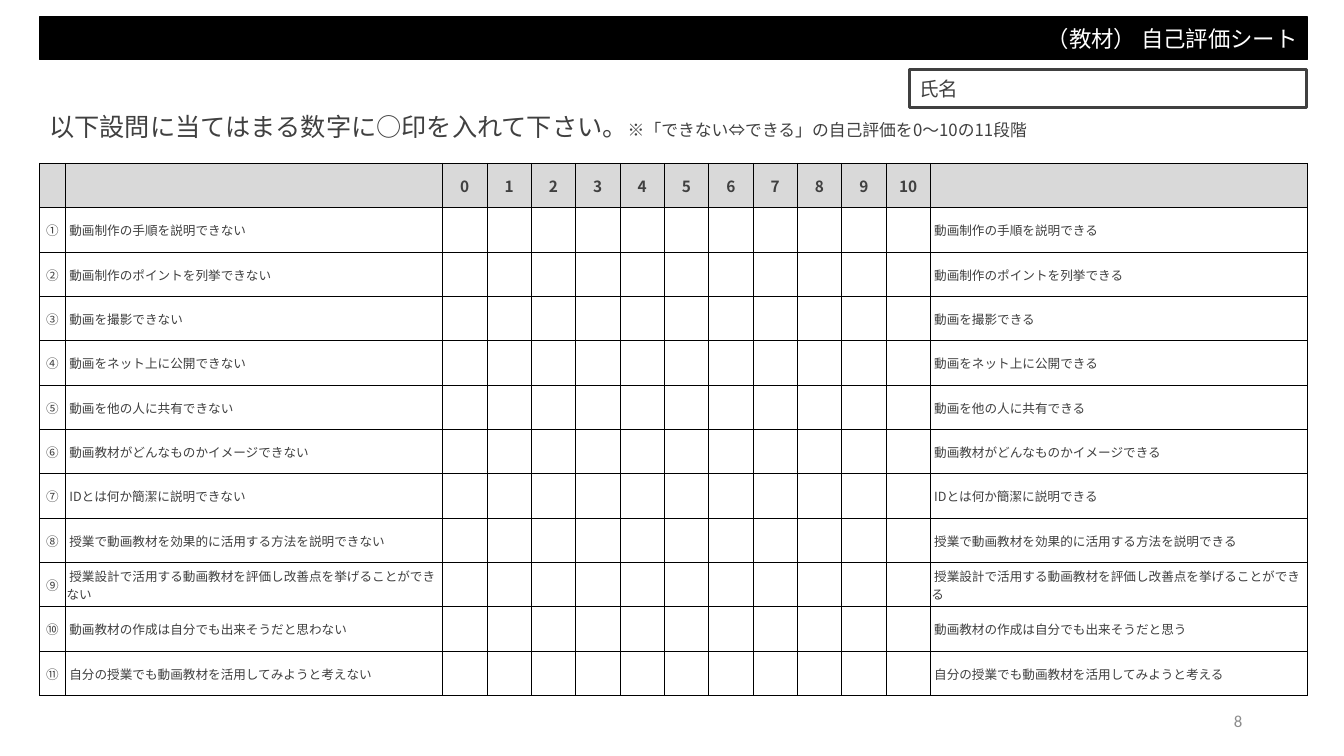
import pptx
import pptx.util
import pptx.dml.color
import pptx.enum.shapes
import pptx.enum.text
import pptx.oxml
import pptx.oxml.ns

Inches = pptx.util.Inches
Pt = pptx.util.Pt
RGBColor = pptx.dml.color.RGBColor
ALIGN = pptx.enum.text.PP_ALIGN
MIDDLE = pptx.enum.text.MSO_ANCHOR.MIDDLE

BLACK = RGBColor(0x00, 0x00, 0x00)
WHITE = RGBColor(0xFF, 0xFF, 0xFF)
DARK = RGBColor(0x40, 0x40, 0x40)
GREY = RGBColor(0x8C, 0x8C, 0x8C)
HEAD = RGBColor(0xD9, 0xD9, 0xD9)
SANS = "Noto Sans CJK JP"

deck = pptx.Presentation()
deck.slide_width = Inches(13.33)
deck.slide_height = Inches(7.5)
slide = deck.slides.add_slide(deck.slide_layouts[6])


def style(font, size, color, name=SANS, bold=False):
    font.size = Pt(size)
    font.bold = bold
    font.name = name
    font.color.rgb = color
    # East Asian glyphs need their own typeface entry
    asian = pptx.oxml.parse_xml(
        f'<a:ea {pptx.oxml.ns.nsdecls("a")} typeface="{name}"/>')
    font._element.find(pptx.oxml.ns.qn("a:latin")).addnext(asian)


def add_box(place, text, size, color, fill, line, width, align):
    box = slide.shapes.add_shape(
        pptx.enum.shapes.MSO_SHAPE.RECTANGLE, *map(Inches, place))
    box.shadow.inherit = False
    box.fill.solid()
    box.fill.fore_color.rgb = fill
    box.line.color.rgb = line
    box.line.width = Pt(width)
    box.text_frame.vertical_anchor = MIDDLE
    para = box.text_frame.paragraphs[0]
    para.text = text
    para.alignment = align
    style(para.font, size, color)


# Title bar and name field
add_box((0.39, 0.17, 12.58, 0.42), "（教材） 自己評価シート", 16,
        WHITE, BLACK, BLACK, 1, ALIGN.RIGHT)
add_box((9.02, 0.69, 3.94, 0.38), "氏名", 14,
        DARK, WHITE, DARK, 2.25, ALIGN.LEFT)

# Instruction
guide = slide.shapes.add_textbox(
    Inches(0.39), Inches(1.06), Inches(11.85), Inches(0.4))
guide.text_frame.word_wrap = True
for text, size in (
        ("以下設問に当てはまる数字に○印を入れて下さい。", 18),
        ("※「できない⇔できる」の自己評価を0～10の11段階", 12)):
    run = guide.text_frame.paragraphs[0].add_run()
    run.text = text
    style(run.font, size, DARK)

# Rating rows: shared stem, low ending, high ending
items = [
    ("動画制作の手順を説明", "できない", "できる"),
    ("動画制作のポイントを列挙", "できない", "できる"),
    ("動画を撮影", "できない", "できる"),
    ("動画をネット上に公開", "できない", "できる"),
    ("動画を他の人に共有", "できない", "できる"),
    ("動画教材がどんなものかイメージ", "できない", "できる"),
    ("IDとは何か簡潔に説明", "できない", "できる"),
    ("授業で動画教材を効果的に活用する方法を説明", "できない", "できる"),
    ("授業設計で活用する動画教材を評価し改善点を挙げることが",
     "できない", "できる"),
    ("動画教材の作成は自分でも出来そうだと", "思わない", "思う"),
    ("自分の授業でも動画教材を活用してみようと", "考えない", "考える"),
]
rows = [["", "", *map(str, range(11)), ""]]
for mark, (stem, low, high) in zip("①②③④⑤⑥⑦⑧⑨⑩⑪", items):
    rows.append([mark, f" {stem}{low}", *[""] * 11, f" {stem}{high}"])

# Rating table
widths = [0.26, 3.74, *[0.44] * 11, 3.74]
table = slide.shapes.add_table(
    len(rows), len(widths), Inches(0.39), Inches(1.62),
    Inches(12.58), Inches(5.28)).table
table.first_row = False
table.horz_banding = False
for column, width in zip(table.columns, widths):
    column.width = Inches(width)
for r, row in enumerate(rows):
    table.rows[r].height = Inches(0.44)
    for c, text in enumerate(row):
        cell = table.cell(r, c)
        cell.margin_left = cell.margin_right = cell.margin_top = Inches(0.01)
        cell.margin_bottom = 0
        cell.vertical_anchor = MIDDLE
        cell.fill.solid()
        cell.fill.fore_color.rgb = WHITE if r else HEAD
        para = cell.text_frame.paragraphs[0]
        para.text = text
        para.alignment = ALIGN.LEFT if c in (1, 13) else ALIGN.CENTER
        style(para.font, 9 if r else 11, DARK, bold=r == 0)
        # Borders come before the fill in the cell properties
        for i, side in enumerate("LRTB"):
            edge = pptx.oxml.parse_xml(
                f'<a:ln{side} {pptx.oxml.ns.nsdecls("a")} w="{Pt(0.5)}">'
                f'<a:solidFill><a:srgbClr val="{BLACK}"/></a:solidFill>'
                f'</a:ln{side}>')
            cell._tc.tcPr.insert(i, edge)

# Page number
page = slide.shapes.add_textbox(
    Inches(9.42), Inches(6.95), Inches(3), Inches(0.4))
page.text_frame.word_wrap = True
page.text_frame.vertical_anchor = MIDDLE
para = page.text_frame.paragraphs[0]
para.text = "8"
para.alignment = ALIGN.RIGHT
style(para.font, 12, GREY, "Calibri")

deck.save("out.pptx")
